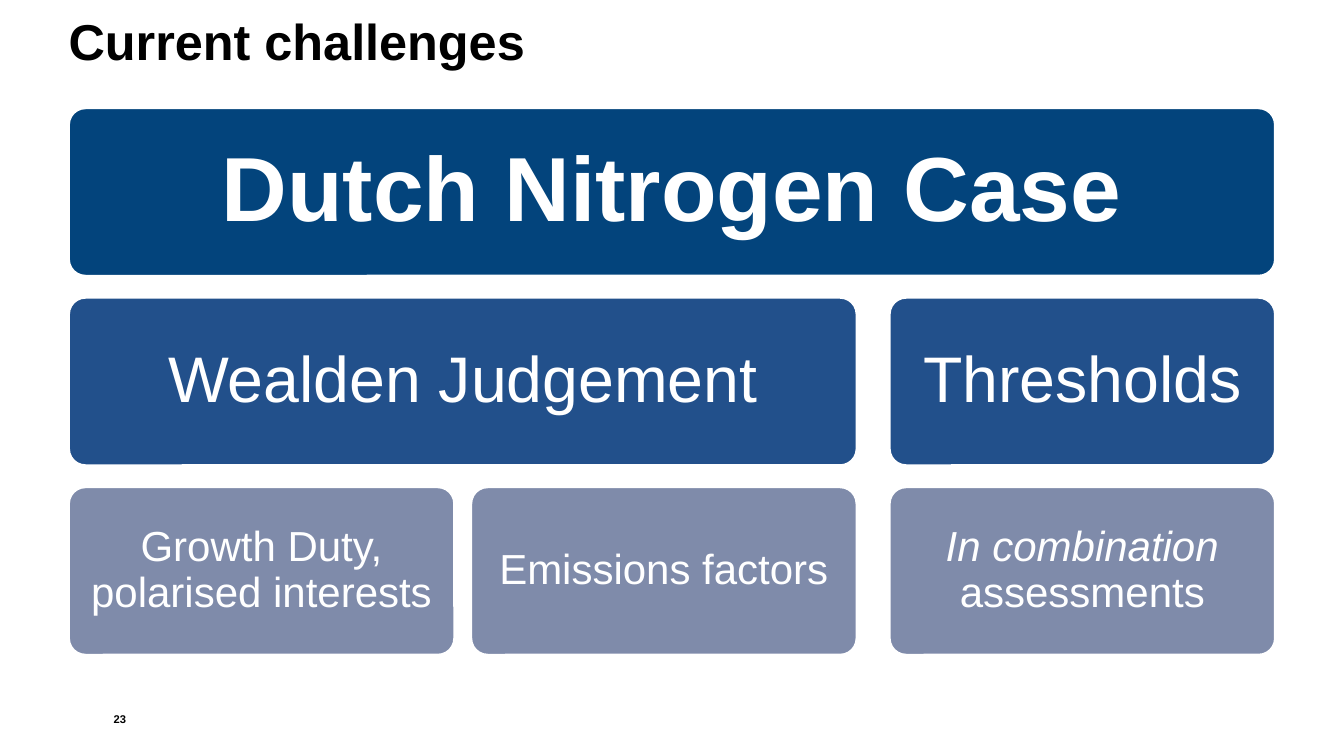
from pptx import Presentation
from pptx.dml.color import RGBColor
from pptx.enum.shapes import MSO_SHAPE
from pptx.enum.text import MSO_ANCHOR, PP_ALIGN
from pptx.util import Pt

ROUNDED = MSO_SHAPE.ROUNDED_RECTANGLE
TOP, MIDDLE, BOTTOM = MSO_ANCHOR.TOP, MSO_ANCHOR.MIDDLE, MSO_ANCHOR.BOTTOM
LEFT, CENTER, RIGHT = PP_ALIGN.LEFT, PP_ALIGN.CENTER, PP_ALIGN.RIGHT
PX = 9144


def rgb(color):
    return RGBColor.from_string(color)


def write(shape, runs, size, color="FFFFFF", bold=False, align=CENTER,
          anchor=MIDDLE, inset=0, spacing=0.9):
    tf = shape.text_frame
    tf.word_wrap = True
    tf.vertical_anchor = anchor
    tf.margin_left = tf.margin_right = inset * PX
    tf.margin_top = tf.margin_bottom = inset * PX
    p = tf.paragraphs[0]
    p.alignment = align
    p.line_spacing = spacing
    for text, italic in runs:
        r = p.add_run()
        r.text = text
        r.font.name = "Arial"
        r.font.size = Pt(size)
        r.font.bold = bold
        r.font.italic = italic
        r.font.color.rgb = rgb(color)


prs = Presentation()
prs.slide_width = 1333 * PX
prs.slide_height = 750 * PX
s = prs.slides.add_slide(prs.slide_layouts[5])

title = s.shapes.title
title.left, title.top, title.width, title.height = 68 * PX, 17 * PX, 1197 * PX, 66 * PX
write(title, [("Current challenges", False)], 36, color="000000", bold=True,
      align=LEFT, anchor=TOP)

COLUMNS = [68, 467, 882]
COL_W, ROW_H = 383, 167
ROW_TOP, ROW_STEP = 107, 188

levels = [
    ("03447C", 65, True, 32, [(0, 2, [("Dutch Nitrogen Case", False)])]),
    ("22508B", 46, False, 24, [(0, 1, [("Wealden Judgement", False)]),
                               (2, 2, [("Thresholds", False)])]),
    ("7F8BAA", 30, False, 17, [(0, 0, [("Growth Duty, polarised interests", False)]),
                               (1, 1, [("Emissions factors", False)]),
                               (2, 2, [("In combination ", True), ("assessments", False)])]),
]
for row, (fill, size, bold, inset, boxes) in enumerate(levels):
    for first, last, runs in boxes:
        left = COLUMNS[first]
        width = COLUMNS[last] + COL_W - left
        box = s.shapes.add_shape(ROUNDED, left * PX, (ROW_TOP + row * ROW_STEP) * PX,
                                 width * PX, ROW_H * PX)
        box.adjustments[0] = 0.1
        box.shadow.inherit = False
        box.fill.solid()
        box.fill.fore_color.rgb = rgb(fill)
        box.line.color.rgb = rgb("FFFFFF")
        box.line.width = Pt(2)
        write(box, runs, size, bold=bold, inset=inset)

number = s.shapes.add_textbox(68 * PX, 678 * PX, 57 * PX, 42 * PX)
write(number, [("23", False)], 8, color="000000", bold=True, align=RIGHT,
      anchor=BOTTOM, spacing=0.95)

prs.save("out.pptx")
